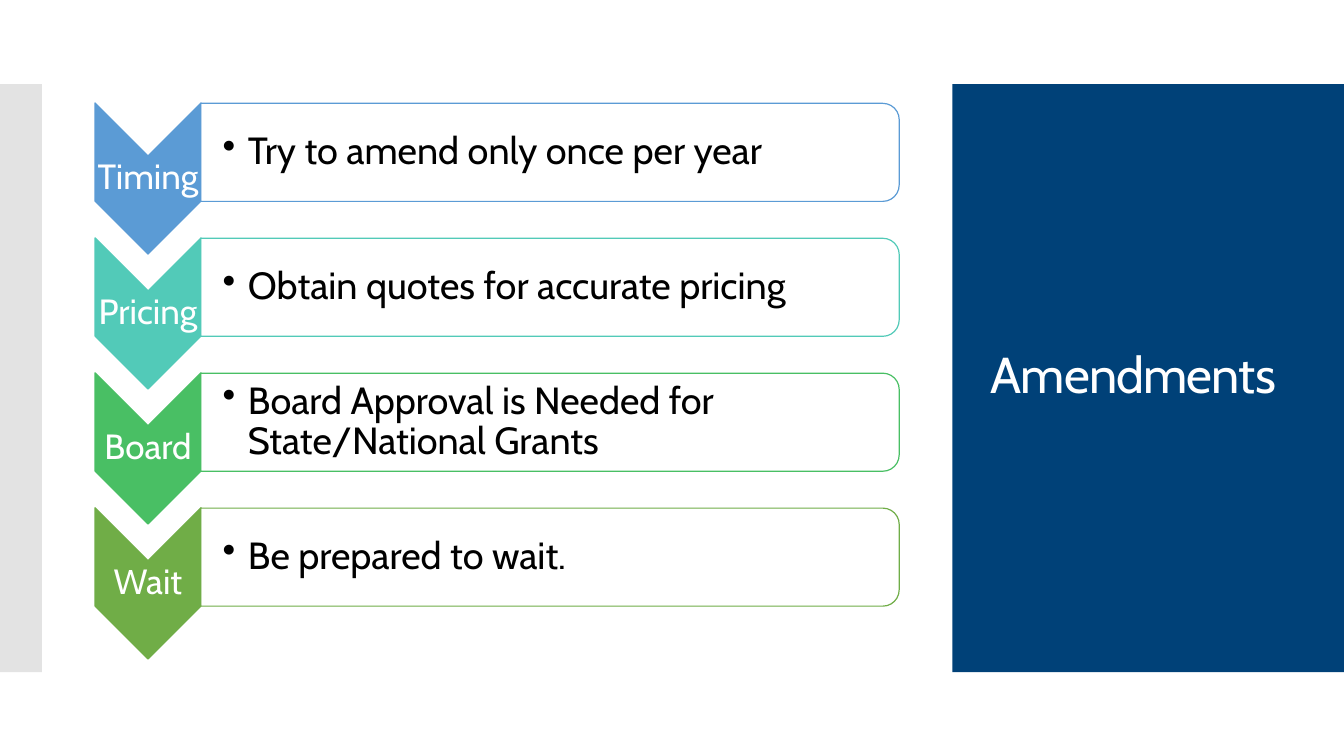
from lxml.etree import SubElement
from pptx import Presentation
from pptx.dml.color import RGBColor
from pptx.enum.shapes import MSO_SHAPE as Preset
from pptx.enum.text import MSO_ANCHOR as Anchor, MSO_AUTO_SIZE as AutoSize, PP_ALIGN as Align
from pptx.oxml.ns import qn
from pptx.util import Cm, Pt

FONT = "Cabin"
NAVY, GREY, WHITE, BLACK = "004178", "C8C8C8", "FFFFFF", "000000"
STEPS = [
    ("Timing", "Try to amend only once per year", "5B9BD5"),
    ("Pricing", "Obtain quotes for accurate pricing", "52CAB8"),
    ("Board", "Board Approval is Needed for State/National Grants", "49BF64"),
    ("Wait", "Be prepared to wait.", "70AD47"),
]
BAND_TOP, BAND_HEIGHT = 2.12, 14.82
STEP_PITCH = 3.4
CHEVRON_X, CHEVRON_Y = 3.73, 4.5
PANEL_X, PANEL_Y = 13.86, 3.84


def paint(color_format, color):
    color_format.rgb = RGBColor.from_string(color)


def add_filled(page, preset, box, fill, line=None, opacity=100, rotation=0):
    """Add a preset shape; box is left, top, width, height in centimetres."""
    shape = page.shapes.add_shape(preset, *map(Cm, box))
    shape.shadow.inherit = False
    shape.rotation = rotation
    shape.fill.solid()
    paint(shape.fill.fore_color, fill)
    if opacity < 100:
        color = shape.element.spPr.find(qn("a:solidFill"))[0]
        SubElement(color, qn("a:alpha"), val=str(opacity * 1000))
    if line:
        paint(shape.line.color, line)
        shape.line.width = Pt(0.85)
    else:
        shape.line.fill.background()
    return shape


def centred(x, y, width, height):
    return x - width / 2, y - height / 2, width, height


def write(shape, text, size, color, align=Align.LEFT):
    """Set one middle-anchored paragraph and return it."""
    frame = shape.text_frame
    frame.text = text
    frame.word_wrap = True
    frame.auto_size = AutoSize.NONE
    frame.vertical_anchor = Anchor.MIDDLE
    para = frame.paragraphs[0]
    para.alignment = align
    para.line_spacing = 0.9
    font = para.runs[0].font
    font.name, font.size = FONT, Pt(size)
    paint(font.color, color)
    return para


def add_text(page, box, text, size, color, align=Align.LEFT, inset=0.05):
    text_box = page.shapes.add_textbox(*map(Cm, box))
    frame = text_box.text_frame
    frame.margin_left = Cm(inset)
    frame.margin_right = frame.margin_top = frame.margin_bottom = Cm(0.05)
    return write(text_box, text, size, color, align)


def add_bullet(para):
    properties = para._p.get_or_add_pPr()
    properties.set("marL", str(Cm(0.64)))
    properties.set("indent", str(Cm(-0.64)))
    SubElement(properties, qn("a:buChar"), char="•")


def add_step(page, index, label, advice, color):
    shift = index * STEP_PITCH
    chevron_y, panel_y = CHEVRON_Y + shift, PANEL_Y + shift
    add_filled(page, Preset.CHEVRON, centred(CHEVRON_X, chevron_y, 3.81, 2.67),
               color, color, rotation=90)
    add_text(page, centred(CHEVRON_X, chevron_y, 2.67, 1.14),
             label, 25, WHITE, Align.CENTER)
    add_filled(page, Preset.ROUND_2_SAME_RECTANGLE,
               centred(PANEL_X, panel_y, 2.47, 17.6),
               WHITE, color, opacity=90, rotation=90)
    add_bullet(add_text(page, (5.08, panel_y - 1.12, 17.48, 2.24),
                        advice, 27, BLACK, inset=0.53))


def add_title(page, text):
    """Put the title on its navy panel."""
    title = page.shapes.title
    panel = add_filled(page, Preset.RECTANGLE,
                       (24.0, BAND_TOP, 9.87, BAND_HEIGHT), NAVY)
    title.element.addprevious(panel.element)
    title.left, title.top, title.width, title.height = map(Cm, (24.71, 3.12, 8.18, 12.78))
    para = write(title, text, 36, WHITE)
    para.runs[0].font._element.set("spc", "-60")


def main():
    deck = Presentation()
    deck.slide_width, deck.slide_height = Cm(33.87), Cm(19.05)
    page = deck.slides.add_slide(deck.slide_layouts.get_by_name("Title Only"))
    add_title(page, "Amendments")
    add_filled(page, Preset.RECTANGLE, (0, BAND_TOP, 1.06, BAND_HEIGHT), GREY, opacity=50)
    for index, step in enumerate(STEPS):
        add_step(page, index, *step)
    deck.save("out.pptx")


if __name__ == "__main__":
    main()
